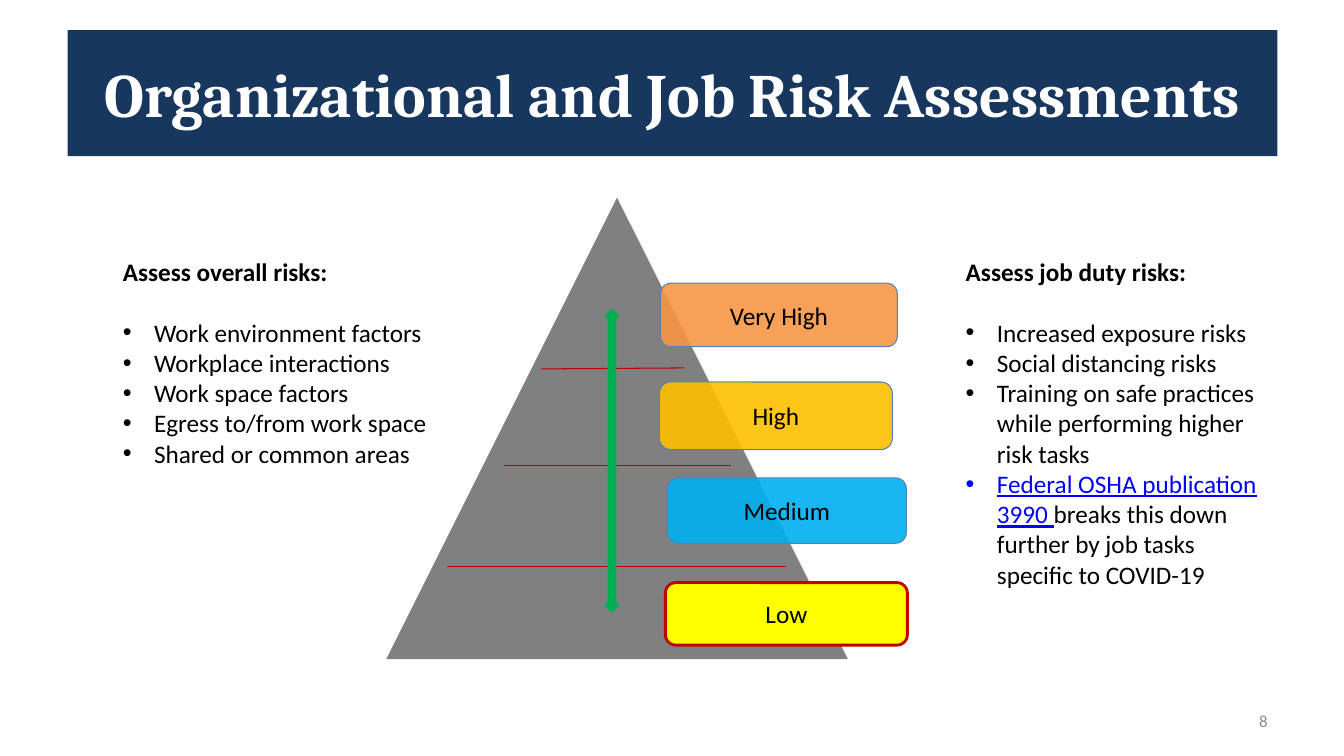
"""Build the risk assessment slide with its pyramid of risk levels."""
import dataclasses

import pptx
import pptx.dml.color
import pptx.enum.shapes
import pptx.enum.text
import pptx.oxml
import pptx.oxml.ns
import pptx.util

Inches, Pt = pptx.util.Inches, pptx.util.Pt
Shape = pptx.enum.shapes.MSO_SHAPE
Align = pptx.enum.text.PP_ALIGN
Anchor = pptx.enum.text.MSO_ANCHOR
qn = pptx.oxml.ns.qn


@dataclasses.dataclass(frozen=True)
class Theme:
    head: str = "Cambria"
    body: str = "Calibri"
    big: int = 44
    text: int = 18
    small: int = 12
    navy: str = "17375E"
    white: str = "FFFFFF"
    black: str = "000000"
    gray: str = "808080"
    pale: str = "8C8C8C"
    link: str = "0000FF"
    red: str = "C00000"
    blue: str = "4F81BD"
    green: str = "00B050"


THEME = Theme()
TITLE = "Organizational and Job Risk Assessments"
NUMBER = "8"
LEVELS = [
    ("Very High", (6.55, 2.81, 2.35, 0.63), "F79646", 90, THEME.blue, 0.75),
    ("High", (6.54, 3.79, 2.31, 0.67), "FFC000", 90, THEME.blue, 0.75),
    ("Medium", (6.62, 4.74, 2.37, 0.65), "00B0F0", 90, THEME.blue, 0.75),
    ("Low", (6.6, 5.78, 2.4, 0.62), "FFFF00", 100, THEME.red, 2),
]
LISTS = [
    ((1.12, 2.49, 3.31, 2.83), "Assess overall risks:", [
        [("Work environment factors", False)],
        [("Workplace interactions", False)],
        [("Work space factors", False)],
        [("Egress to/from work space", False)],
        [("Shared or common areas", False)],
    ]),
    ((9.48, 2.49, 3.16, 4.04), "Assess job duty risks:", [
        [("Increased exposure risks", False)],
        [("Social distancing risks", False)],
        [("Training on safe practices while performing higher risk tasks", False)],
        [("Federal OSHA publication 3990 ", True),
         ("breaks this down further by job tasks specific to COVID-19", False)],
    ]),
]
RULES = [
    (6.79, 3.65, 5.37, 3.66),
    (7.25, 4.62, 5, 4.62),
    (7.8, 5.62, 4.43, 5.62),
]


def inch(box):
    return [Inches(v) for v in box]


def rgb(code):
    return pptx.dml.color.RGBColor.from_string(code)


def write(para, text, size=THEME.text, color=THEME.black, font=THEME.body, bold=False):
    run = para.add_run()
    run.text = text
    run.font.size = Pt(size)
    run.font.name = font
    run.font.bold = bold
    run.font.color.rgb = rgb(color)
    return run


def paint(shape, color, alpha=100):
    shape.fill.solid()
    shape.fill.fore_color.rgb = rgb(color)
    if alpha < 100:
        tone = shape.fill._xPr.find(qn("a:solidFill"))[0]
        tone.append(pptx.oxml.parse_xml(
            f'<a:alpha {pptx.oxml.ns.nsdecls("a")} val="{alpha * 1000}"/>'))


def draw(slide, kind, box, color, alpha=100, edge=None, width=0):
    shape = slide.shapes.add_shape(kind, *inch(box))
    shape.shadow.inherit = False
    paint(shape, color, alpha)
    if edge:
        shape.line.color.rgb = rgb(edge)
        shape.line.width = Pt(width)
    else:
        shape.line.fill.background()
    return shape


def bullet(para):
    props = para._p.get_or_add_pPr()
    props.set("marL", str(Inches(0.31)))
    props.set("indent", str(-Inches(0.31)))
    space = pptx.oxml.ns.nsdecls("a")
    props.append(pptx.oxml.parse_xml(f'<a:buFont {space} typeface="Arial"/>'))
    props.append(pptx.oxml.parse_xml(f'<a:buChar {space} char="•"/>'))


def textbox(slide, box):
    frame = slide.shapes.add_textbox(*inch(box)).text_frame
    frame.word_wrap = True
    return frame


def add_title(slide):
    title = slide.shapes.title
    title.left, title.top, title.width, title.height = inch((0.67, 0.3, 12, 1.25))
    paint(title, THEME.navy)
    frame = title.text_frame
    frame.auto_size = pptx.enum.text.MSO_AUTO_SIZE.NONE
    frame.vertical_anchor = Anchor.MIDDLE
    para = frame.paragraphs[0]
    para.alignment = Align.CENTER
    write(para, TITLE, THEME.big, THEME.white, THEME.head, True)


def add_level(slide, name, box, color, alpha, edge, width):
    shape = draw(slide, Shape.ROUNDED_RECTANGLE, box, color, alpha, edge, width)
    frame = shape.text_frame
    frame.vertical_anchor = Anchor.MIDDLE
    para = frame.paragraphs[0]
    para.alignment = Align.CENTER
    write(para, name)


def add_list(slide, box, head, items):
    frame = textbox(slide, box)
    para = frame.paragraphs[0]
    para.space_after = Pt(22)
    write(para, head, bold=True)
    for item in items:
        para = frame.add_paragraph()
        bullet(para)
        for text, link in item:
            run = write(para, text, color=THEME.link if link else THEME.black)
            run.font.underline = link


def add_rule(slide, ends):
    line = slide.shapes.add_connector(
        pptx.enum.shapes.MSO_CONNECTOR.STRAIGHT, *inch(ends))
    line.line.color.rgb = rgb(THEME.red)
    line.line.width = Pt(0.75)
    line._element.spPr.append(pptx.oxml.parse_xml(
        f'<a:effectLst {pptx.oxml.ns.nsdecls("a")}/>'))


def main():
    deck = pptx.Presentation()
    deck.slide_width, deck.slide_height = Inches(13.33), Inches(7.5)
    slide = deck.slides.add_slide(deck.slide_layouts[5])
    add_title(slide)
    draw(slide, Shape.ISOSCELES_TRIANGLE, (3.83, 1.96, 4.58, 4.58), THEME.gray)
    for level in LEVELS:
        add_level(slide, *level)
    for column in LISTS:
        add_list(slide, *column)
    for ends in RULES:
        add_rule(slide, ends)
    draw(slide, Shape.UP_DOWN_ARROW, (6.01, 3.08, 0.12, 2.98),
         THEME.green, edge=THEME.green, width=2)
    frame = textbox(slide, (9.56, 6.95, 3.11, 0.4))
    frame.vertical_anchor = Anchor.MIDDLE
    frame.paragraphs[0].alignment = Align.RIGHT
    write(frame.paragraphs[0], NUMBER, THEME.small, THEME.pale)
    deck.save("out.pptx")


if __name__ == "__main__":
    main()
